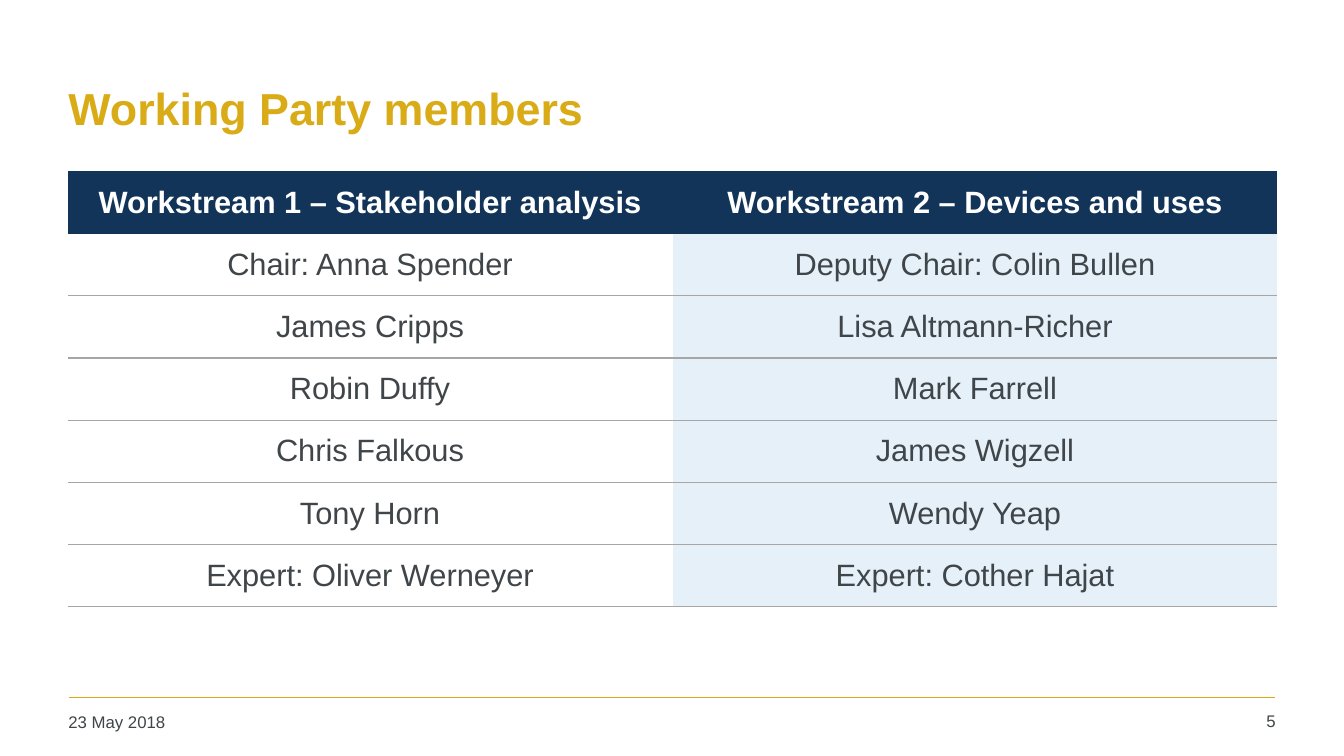
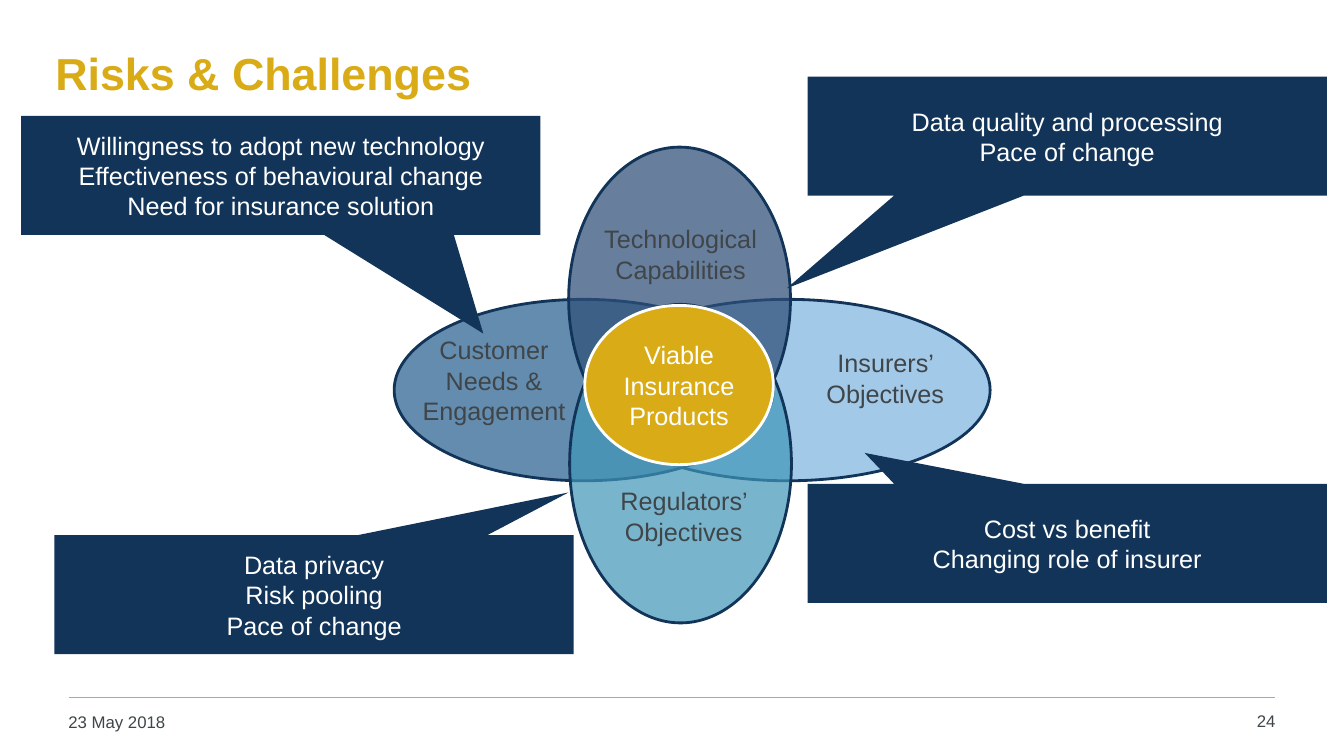
"""Build the working party members and risks slides."""
import lxml.etree
import pptx
import pptx.dml.color
import pptx.enum.shapes
import pptx.enum.text
import pptx.oxml.ns
import pptx.util

Inches = pptx.util.Inches
Shape = pptx.enum.shapes.MSO_SHAPE
Align = pptx.enum.text.PP_ALIGN
Anchor = pptx.enum.text.MSO_ANCHOR
qn = pptx.oxml.ns.qn

WIDTH, HEIGHT = 13.33, 7.5
FONT = "Arial"
GOLD, NAVY, SLATE, WHITE = "D9AB16", "113458", "3F4548", "FFFFFF"
PALE, RULE = "E5F0F9", "A6A6A6"
NO_STYLE = "{2D5ABB26-0587-4C30-8999-92F81FD0307C}"
DATE = "23 May 2018"

MEMBERS = [
    ("Workstream 1 – Stakeholder analysis", "Workstream 2 – Devices and uses"),
    ("Chair: Anna Spender", "Deputy Chair: Colin Bullen"),
    ("James Cripps", "Lisa Altmann-Richer"),
    ("Robin Duffy", "Mark Farrell"),
    ("Chris Falkous", "James Wigzell"),
    ("Tony Horn", "Wendy Yeap"),
    ("Expert: Oliver Werneyer", "Expert: Cother Hajat"),
]
TABLE_LEFT, TABLE_TOP, COLUMN, ROW = 0.67, 1.7, 6, 0.617

PETALS = [
    ((5.8, 2.97, 4.02, 1.8), "7CB3E1", 70),
    ((3.91, 2.97, 3.76, 1.8), "215C8E", 70),
    ((5.64, 1.46, 2.2, 3.02), "2F5079", 73),
    ((5.65, 3.02, 2.2, 3.16), "4096B8", 70),
]
CORE = ((5.8, 3.03, 1.87, 1.58), "Viable Insurance Products")
LABEL_WIDTH = 1.78
LABELS = [
    (5.86, 2.17, 0.71, "Technological Capabilities"),
    (5.89, 4.77, 0.71, "Regulators’ Objectives"),
    (7.89, 3.4, 0.71, "Insurers’ Objectives"),
    (4.01, 3.27, 1.01, "Customer Needs & Engagement"),
]
CALLOUT_SIZE = (5.15, 1.18)
CALLOUTS = [
    ((8.01, 0.76), (-0.54, 1.28), ["Data quality and processing", "Pace of change"]),
    ((8.01, 4.8), (-0.39, -0.76), ["Cost vs benefit", "Changing role of insurer"]),
    ((0.54, 5.31), (0.49, -0.86), ["Data privacy", "Risk pooling", "Pace of change"]),
    ((0.21, 1.15), (0.39, 1.33), ["Willingness to adopt new technology",
                                  "Effectiveness of behavioural change",
                                  "Need for insurance solution"]),
]


def rgb(value):
    """Turn a hex string into a colour."""
    return pptx.dml.color.RGBColor.from_string(value)


def place(*lengths):
    """Turn lengths in inches into slide units."""
    return [Inches(length) for length in lengths]


def write(frame, lines, size=18, color=SLATE, bold=False, align=Align.CENTER):
    """Fill a text frame with one paragraph per line."""
    frame.word_wrap = True
    for index, line in enumerate(lines):
        para = frame.add_paragraph() if index else frame.paragraphs[0]
        para.alignment = align
        span = para.add_run()
        span.text = line
        span.font.name, span.font.size = FONT, pptx.util.Pt(size)
        span.font.bold, span.font.color.rgb = bold, rgb(color)


def add_text(page, area, text, anchor=Anchor.TOP, **style):
    """Add a text box."""
    box = page.shapes.add_textbox(*place(*area))
    box.text_frame.vertical_anchor = anchor
    write(box.text_frame, [text], **style)


def add_block(page, kind, area, fill, line=None, alpha=100, lines=()):
    """Add a filled shape with optional outline, transparency and text."""
    block = page.shapes.add_shape(kind, *place(*area))
    block.shadow.inherit = False
    block.fill.solid()
    block.fill.fore_color.rgb = rgb(fill)
    if alpha < 100:
        tone = block.fill._xPr.find(qn("a:solidFill"))[0]
        lxml.etree.SubElement(tone, qn("a:alpha"), val=str(alpha * 1000))
    if line:
        block.line.color.rgb = rgb(line)
        block.line.width = pptx.util.Pt(2)
    else:
        block.line.fill.background()
    block.text_frame.vertical_anchor = Anchor.MIDDLE
    write(block.text_frame, lines, color=WHITE)
    return block


def add_page(deck, title, left, top, number):
    """Add a page with its title, footer rule, date and number."""
    page = deck.slides.add_slide(deck.slide_layouts[6])
    rule = page.shapes.add_connector(pptx.enum.shapes.MSO_CONNECTOR.STRAIGHT,
                                     *place(0.68, 6.92, 12.65, 6.92))
    rule.line.color.rgb = rgb(GOLD)
    rule.line.width = pptx.util.Pt(1)
    lxml.etree.SubElement(rule._element.spPr, qn("a:effectLst"))
    add_text(page, (left, top, 12.09, 1.25), title, Anchor.MIDDLE,
             size=32, color=GOLD, bold=True, align=Align.LEFT)
    add_text(page, (0.58, 7.01, 2.94, 0.36), DATE, size=12, align=Align.LEFT)
    add_text(page, (11.81, 7, 0.94, 0.37), str(number), size=12, align=Align.RIGHT)
    return page


def underline(cell):
    """Draw the rule below a table cell."""
    edge = lxml.etree.SubElement(cell._tc.get_or_add_tcPr(), qn("a:lnB"), w="12700")
    fill = lxml.etree.SubElement(edge, qn("a:solidFill"))
    lxml.etree.SubElement(fill, qn("a:srgbClr"), val=RULE)


def add_members(page):
    """Add the table of members."""
    rows, columns = len(MEMBERS), len(MEMBERS[0])
    area = place(TABLE_LEFT, TABLE_TOP, COLUMN * columns, ROW * rows)
    table = page.shapes.add_table(rows, columns, *area).table
    table.horz_banding = False
    table._tbl.tblPr.find(qn("a:tableStyleId")).text = NO_STYLE
    for row, names in enumerate(MEMBERS):
        header = row == 0
        for column, name in enumerate(names):
            cell = table.cell(row, column)
            if not header:
                underline(cell)
            cell.fill.solid()
            cell.fill.fore_color.rgb = rgb(NAVY if header else (WHITE, PALE)[column])
            cell.vertical_anchor = Anchor.MIDDLE
            write(cell.text_frame, [name], size=22, bold=header,
                  color=WHITE if header else SLATE)


def add_risks(page):
    """Add the overlapping ellipses and their callouts."""
    for area, fill, alpha in PETALS:
        add_block(page, Shape.OVAL, area, fill, NAVY, alpha)
    area, text = CORE
    add_block(page, Shape.OVAL, area, GOLD, WHITE, lines=[text])
    for left, top, height, text in LABELS:
        add_text(page, (left, top, LABEL_WIDTH, height), text)
    for corner, tip, lines in CALLOUTS:
        callout = add_block(page, Shape.RECTANGULAR_CALLOUT, corner + CALLOUT_SIZE,
                            NAVY, lines=lines)
        for index, share in enumerate(tip):
            callout.adjustments[index] = share


def main():
    """Build and save the deck."""
    deck = pptx.Presentation()
    deck.slide_width, deck.slide_height = place(WIDTH, HEIGHT)
    add_members(add_page(deck, "Working Party members", 0.58, 0.44, 5))
    add_risks(add_page(deck, "Risks & Challenges", 0.45, 0.09, 24))
    deck.save("out.pptx")


if __name__ == "__main__":
    main()
